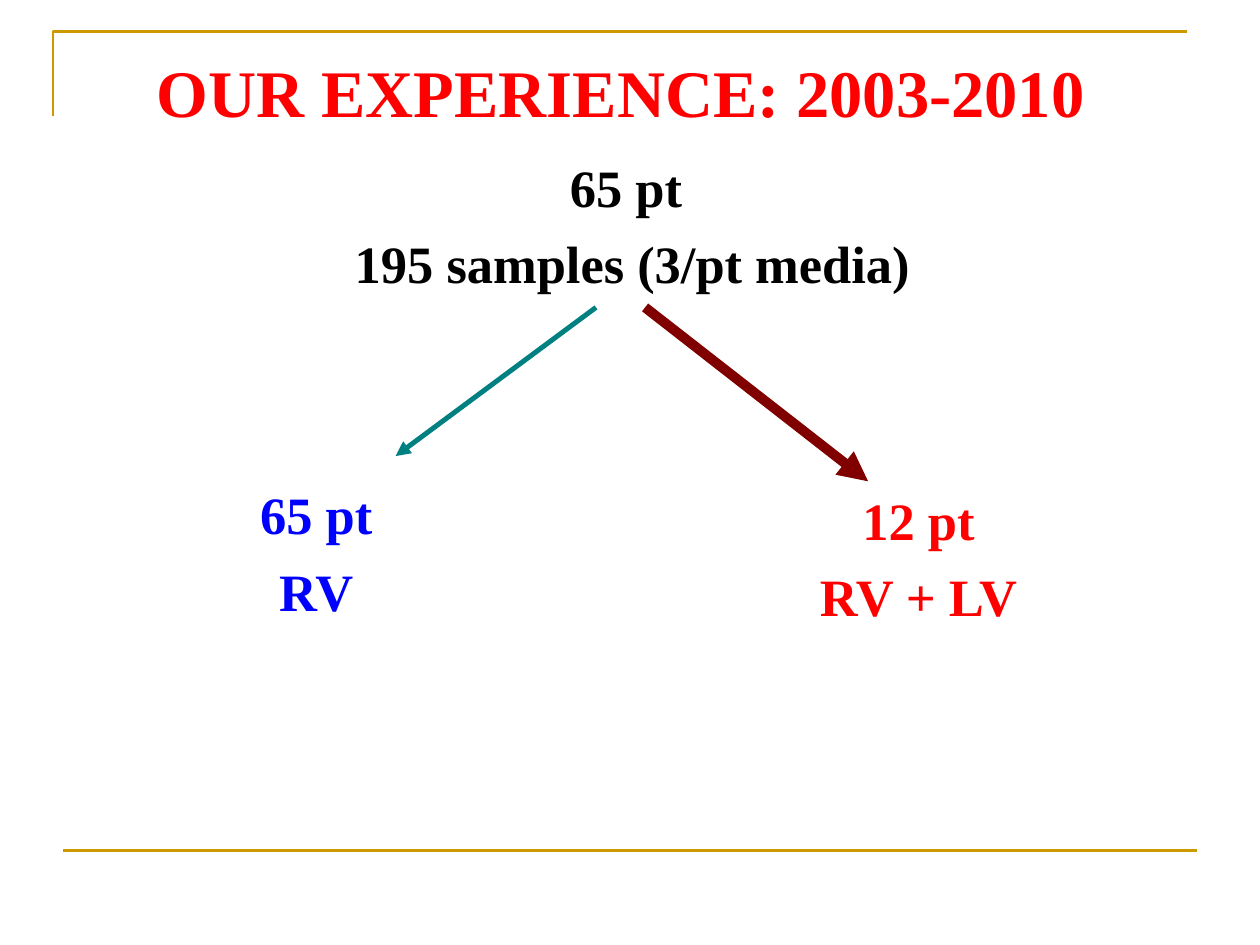
from dataclasses import dataclass

from lxml import etree
from pptx import Presentation
from pptx.dml.color import RGBColor
from pptx.enum.shapes import MSO_CONNECTOR
from pptx.enum.text import MSO_ANCHOR, MSO_AUTO_SIZE, PP_ALIGN
from pptx.oxml.ns import qn
from pptx.util import Inches, Pt

STRAIGHT = MSO_CONNECTOR.STRAIGHT
TOP, MIDDLE = MSO_ANCHOR.TOP, MSO_ANCHOR.MIDDLE
CENTER = PP_ALIGN.CENTER
NO_FIT = MSO_AUTO_SIZE.NONE


@dataclass
class Theme:
    font: str = "Times New Roman"
    head: int = 38
    body: int = 30
    gap: float = 7.5
    red: str = "FF0000"
    blue: str = "0000FF"
    black: str = "000000"
    gold: str = "CC9900"
    teal: str = "008080"
    maroon: str = "800000"


theme = Theme()


def set_text(shape, box, text, size, color, gap=0, anchor=TOP):
    shape.left, shape.top, shape.width, shape.height = map(Inches, box)
    frame = shape.text_frame
    frame.text = text
    frame.word_wrap = True
    frame.auto_size = NO_FIT
    frame.vertical_anchor = anchor
    for para in frame.paragraphs:
        para.alignment = CENTER
        para.space_before = Pt(gap)
        props = para._p.get_or_add_pPr()
        props.set("marL", "0")
        props.set("indent", "0")
        etree.SubElement(props, qn("a:buNone"))
        for run in para.runs:
            run.font.name = theme.font
            run.font.size = Pt(size)
            run.font.bold = True
            run.font.color.rgb = RGBColor.from_string(color)


def add_line(start, end, color, width, arrow=False):
    line = slide.shapes.add_connector(STRAIGHT, *map(Inches, start + end))
    line.line.color.rgb = RGBColor.from_string(color)
    line.line.width = Pt(width)
    if arrow:
        etree.SubElement(line.line._get_or_add_ln(), qn("a:tailEnd"), type="triangle")
    etree.SubElement(line._element.spPr, qn("a:effectLst"))


deck = Presentation()
deck.slide_width, deck.slide_height = Inches(10), Inches(7.5)
slide = deck.slides.add_slide(deck.slide_layouts[1])
shapes = slide.shapes

pen = shapes.build_freeform(Inches(0.42), Inches(0.92), scale=1.0)
pen.add_line_segments(
    [(Inches(0.42), Inches(0.25)), (Inches(9.42), Inches(0.25))], close=False
)
frame = pen.convert_to_shape()
frame.fill.background()
frame.line.color.rgb = RGBColor.from_string(theme.gold)
frame.line.width = Pt(1.5)
frame.shadow.inherit = False
add_line((0.5, 6.75), (9.5, 6.75), theme.gold, 1.5)

set_text(shapes.title, (0.5, 0.3, 8.99, 0.85), "OUR EXPERIENCE: 2003-2010 ",
         theme.head, theme.red, anchor=MIDDLE)

groups = [
    (slide.placeholders[1], (5.91, 3.82, 2.76, 1.21), "12 pt\nRV + LV", theme.red),
    (None, (0, 1.18, 10.04, 1.21), "65 pt \n195 samples (3/pt media)", theme.black),
    (None, (1.48, 3.78, 2.06, 1.81), "65 pt\nRV", theme.blue),
]
for holder, box, text, color in groups:
    shape = holder or shapes.add_textbox(0, 0, 0, 0)
    set_text(shape, box, text, theme.body, color, theme.gap)

add_line((4.73, 2.44), (3.14, 3.62), theme.teal, 2.83, arrow=True)
add_line((5.12, 2.44), (6.89, 3.82), theme.maroon, 5.67, arrow=True)

deck.save("out.pptx")
